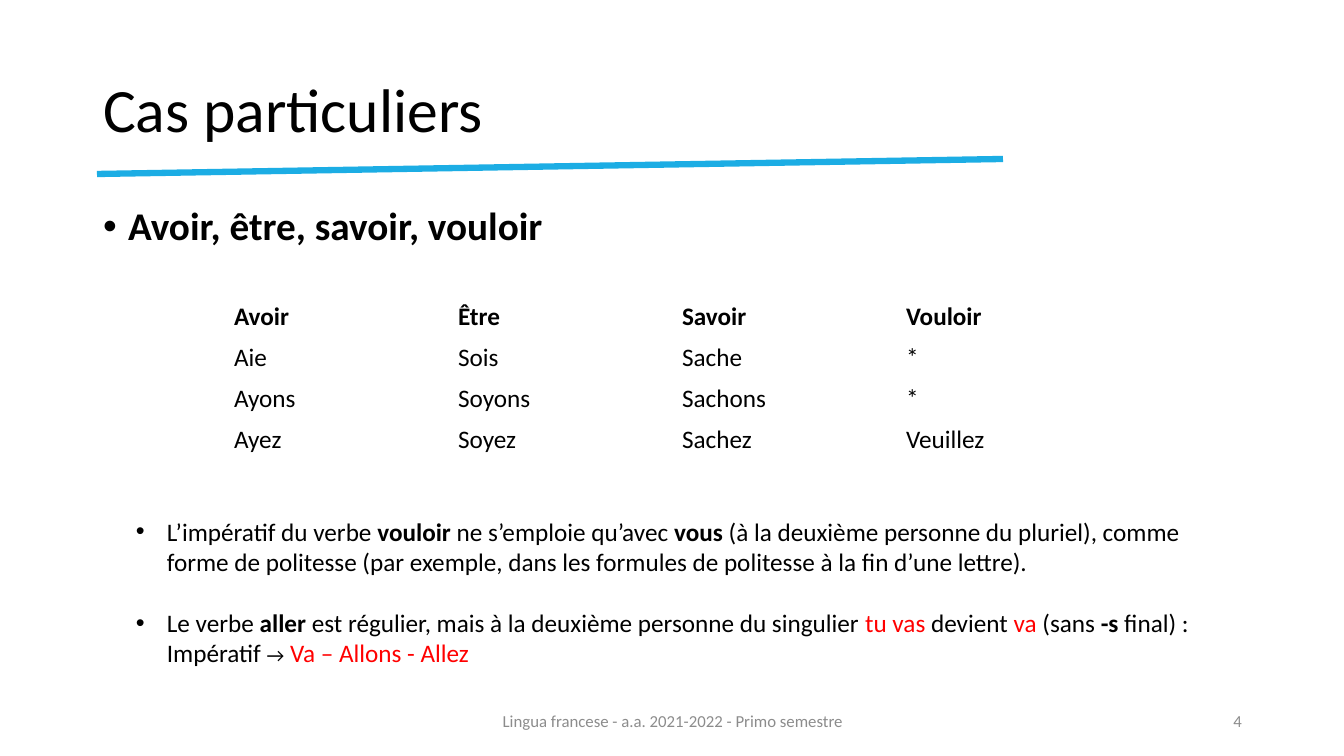
from lxml.etree import SubElement
from pptx import Presentation
from pptx.dml.color import RGBColor
from pptx.enum.shapes import MSO_CONNECTOR as Connector
from pptx.enum.text import MSO_ANCHOR as Anchor, MSO_AUTO_SIZE as AutoSize, PP_ALIGN as Align
from pptx.oxml.ns import qn
from pptx.util import Pt

# Content
TITLE = "Cas particuliers"
VERBS = "Avoir, être, savoir, vouloir"
IMPERATIVES = [
    ["Avoir", "Être", "Savoir", "Vouloir"],
    ["Aie", "Sois", "Sache", "*"],
    ["Ayons", "Soyons", "Sachons", "*"],
    ["Ayez", "Soyez", "Sachez", "Veuillez"],
]
BOLD, RED, SMALL = {"bold": True}, {"color": "FF0000"}, {"size": 14}
NOTES = [
    [("L’impératif du verbe ", {}), ("vouloir", BOLD), (" ne s’emploie qu’avec ", {}),
     ("vous", BOLD),
     (" (à la deuxième personne du pluriel), comme forme de politesse (par exemple, "
      "dans les formules de politesse à la fin d’une lettre).", {})],
    [("Le verbe ", {}), ("aller", BOLD),
     (" est régulier, mais à la deuxième personne du singulier ", {}), ("tu vas ", RED),
     ("devient ", {}), ("va", RED), (" (sans ", {}), ("-s ", BOLD),
     ("final) : Impératif ", {}), ("→", SMALL), (" ", {}), ("Va – Allons - Allez", RED)],
]
FOOTER = "Lingua francese - a.a. 2021-2022 - Primo semestre"
PAGE_NUMBER = "4"

# Layout in px
SLIDE_SIZE = (1344, 756)
TITLE_BOX = (93, 40, 1159, 146)
BODY_BOX = (93, 202, 1159, 480)
TABLE_LEFT, TABLE_TOP, COLUMN_WIDTH, ROW_HEIGHT = 224, 296, 224, 41
NOTES_BOX = (126, 511, 1082, 163)
FOOTER_BOX = (446, 701, 454, 40)
NUMBER_BOX = (950, 701, 302, 40)
UNDERLINE = (97, 174, 1003, 159)
EMU_PER_PX = 914400 / 100.8


def px(*lengths):
    return [round(length * EMU_PER_PX) for length in lengths]


def rgb(value):
    return RGBColor.from_string(value)


def write_text(frame, paragraphs, size=18, color="000000", bold=False, align=Align.LEFT,
               anchor=Anchor.TOP, line_spacing=1.0, before=0, gap=0, bullet_indent=0):
    """Fill a text frame; each paragraph is a string or a list of (text, format) runs."""
    frame.word_wrap = True
    frame.auto_size = AutoSize.NONE
    frame.vertical_anchor = anchor
    for index, content in enumerate(paragraphs):
        paragraph = frame.add_paragraph() if index else frame.paragraphs[0]
        paragraph.alignment = align
        paragraph.line_spacing = line_spacing
        paragraph.space_before = Pt(gap if index else before)
        if bullet_indent:
            properties = paragraph._p.get_or_add_pPr()
            indent = px(bullet_indent)[0]
            properties.set("marL", str(indent))
            properties.set("indent", str(-indent))
            SubElement(properties, qn("a:buFont"), typeface="Arial")
            SubElement(properties, qn("a:buChar"), char="•")
        runs = [(content, {})] if isinstance(content, str) else content
        for text, style in runs:
            run = paragraph.add_run()
            run.text = text
            run.font.name = "Calibri"
            run.font.size = Pt(style.get("size", size))
            run.font.bold = style.get("bold", bold)
            run.font.color.rgb = rgb(style.get("color", color))


def place(shape, box):
    shape.left, shape.top, shape.width, shape.height = px(*box)


presentation = Presentation()
presentation.slide_width, presentation.slide_height = px(*SLIDE_SIZE)
slide = presentation.slides.add_slide(presentation.slide_layouts[1])

# Title and heading
title, body = slide.placeholders
place(title, TITLE_BOX)
write_text(title.text_frame, [TITLE], size=44, anchor=Anchor.MIDDLE, line_spacing=0.9)
place(body, BODY_BOX)
write_text(body.text_frame, [VERBS], size=28, bold=True, line_spacing=0.9, before=10,
           bullet_indent=25)

# Table of imperatives
row_count, column_count = len(IMPERATIVES), len(IMPERATIVES[0])
table = slide.shapes.add_table(
    row_count, column_count,
    *px(TABLE_LEFT, TABLE_TOP, COLUMN_WIDTH * column_count, ROW_HEIGHT * row_count)).table
table.horz_banding = False
for row_index, forms in enumerate(IMPERATIVES):
    for column_index, form in enumerate(forms):
        cell = table.cell(row_index, column_index)
        cell.fill.solid()
        cell.fill.fore_color.rgb = rgb("FFFFFF")
        write_text(cell.text_frame, [form], bold=row_index == 0)

# Notes, footer and page number
for box, paragraphs, style in [
    (NOTES_BOX, NOTES, {"gap": 22, "bullet_indent": 31}),
    (FOOTER_BOX, [FOOTER],
     {"size": 12, "color": "8C8C8C", "align": Align.CENTER, "anchor": Anchor.MIDDLE}),
    (NUMBER_BOX, [PAGE_NUMBER],
     {"size": 12, "color": "8C8C8C", "align": Align.RIGHT, "anchor": Anchor.MIDDLE}),
]:
    write_text(slide.shapes.add_textbox(*px(*box)).text_frame, paragraphs, **style)

# Slanted line under the title
underline = slide.shapes.add_connector(Connector.STRAIGHT, *px(*UNDERLINE))
underline.line.color.rgb = rgb("1CADE4")
underline.line.width = Pt(4.5)
SubElement(underline._element.spPr, qn("a:effectLst"))

presentation.save("out.pptx")
